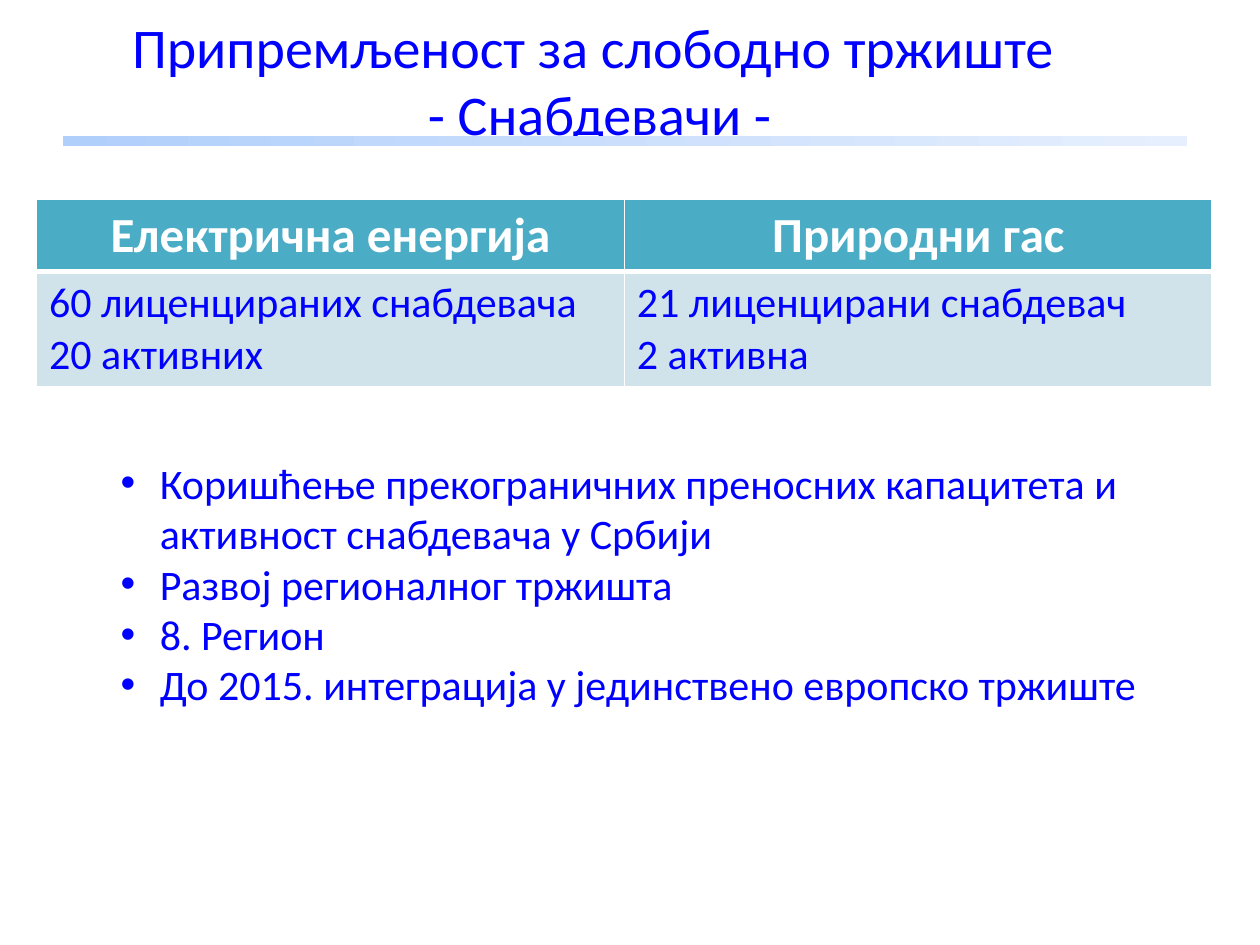
from dataclasses import dataclass

from lxml.etree import SubElement
from pptx import Presentation
from pptx.dml.color import RGBColor as Color
from pptx.enum.shapes import MSO_SHAPE as Shape
from pptx.enum.text import MSO_ANCHOR as Anchor, MSO_AUTO_SIZE as AutoSize, PP_ALIGN as Align
from pptx.oxml.ns import qn
from pptx.util import Inches, Pt


@dataclass(frozen=True)
class Theme:
    font: str = "Calibri"
    text: str = "0000FF"
    white: str = "FFFFFF"
    header_fill: str = "4BACC6"
    body_fill: str = "D0E3EA"
    bar_start: str = "B0CFFB"
    bar_end: str = "E6EFFD"
    title_size: int = 32
    header_size: int = 28
    body_size: int = 24


class SlideBuilder:
    def __init__(self, slide, theme):
        self.slide = slide
        self.theme = theme

    def set_text(self, frame, lines, size, color, align=Align.LEFT, bold=False):
        frame.word_wrap = True
        frame.text = "\n".join(lines)
        for paragraph in frame.paragraphs:
            paragraph.alignment = align
            font = paragraph.font
            font.name = self.theme.font
            font.size = Pt(size)
            font.bold = bold
            font.color.rgb = Color.from_string(color)

    def title(self, text, left, top, width, height):
        title = self.slide.shapes.title
        title.left, title.top = Inches(left), Inches(top)
        title.width, title.height = Inches(width), Inches(height)
        frame = title.text_frame
        frame.auto_size = AutoSize.NONE
        frame.vertical_anchor = Anchor.MIDDLE
        self.set_text(frame, [text], self.theme.title_size, self.theme.text, Align.CENTER)

    def gradient_bar(self, left, top, width, height):
        bar = self.slide.shapes.add_shape(
            Shape.RECTANGLE, Inches(left), Inches(top), Inches(width), Inches(height))
        bar.shadow.inherit = False
        bar.line.fill.background()
        bar.fill.gradient()
        bar.fill.gradient_angle = 0
        colors = (self.theme.bar_start, self.theme.bar_end)
        for stop, position, color in zip(bar.fill.gradient_stops, (0, 1), colors):
            stop.position = position
            stop.color.rgb = Color.from_string(color)

    def borders(self, cell, bottom_width):
        properties = cell._tc.get_or_add_tcPr()
        widths = {"a:lnL": 1, "a:lnR": 1, "a:lnT": 1, "a:lnB": bottom_width}
        for index, (tag, width) in enumerate(widths.items()):
            line = SubElement(properties, qn(tag), w=str(Pt(width)))
            fill = SubElement(line, qn("a:solidFill"))
            SubElement(fill, qn("a:srgbClr"), val=self.theme.white)
            properties.insert(index, line)

    def table(self, columns, left, top, width, row_heights):
        theme = self.theme
        table = self.slide.shapes.add_table(
            2, len(columns), Inches(left), Inches(top),
            Inches(width), Inches(sum(row_heights))).table
        for row, height in zip(table.rows, row_heights):
            row.height = Inches(height)
        for index, (heading, lines) in enumerate(columns):
            header, body = table.cell(0, index), table.cell(1, index)
            self.set_text(header.text_frame, [heading], theme.header_size,
                          theme.white, Align.CENTER, bold=True)
            self.set_text(body.text_frame, lines, theme.body_size, theme.text)
            body.vertical_anchor = Anchor.MIDDLE
            for cell, color, bottom_width in ((header, theme.header_fill, 3),
                                              (body, theme.body_fill, 1)):
                cell.fill.solid()
                cell.fill.fore_color.rgb = Color.from_string(color)
                self.borders(cell, bottom_width)

    def bullets(self, lines, left, top, width, height):
        box = self.slide.shapes.add_textbox(
            Inches(left), Inches(top), Inches(width), Inches(height))
        self.set_text(box.text_frame, lines, self.theme.body_size, self.theme.text)
        for paragraph in box.text_frame.paragraphs:
            paragraph.level = 1
            properties = paragraph._p.get_or_add_pPr()
            properties.set("marL", str(Inches(0.5)))
            properties.set("indent", str(Inches(-0.31)))
            font = SubElement(properties, qn("a:buFont"), typeface="Arial")
            bullet = SubElement(properties, qn("a:buChar"), char="•")
            properties.insert(0, font)
            properties.insert(1, bullet)


def main():
    presentation = Presentation()
    presentation.slide_width, presentation.slide_height = Inches(10), Inches(7.5)
    slide = presentation.slides.add_slide(presentation.slide_layouts[5])
    builder = SlideBuilder(slide, Theme())
    builder.title("Припремљеност за слободно тржиште \v- Снабдевачи -", 0.5, 0.17, 8.52, 0.92)
    builder.gradient_bar(0.5, 1.08, 8.92, 0.08)
    builder.table([
        ("Електрична енергија", ["60 лиценцираних снабдевача", "20 активних"]),
        ("Природни гас", ["21 лиценцирани снабдевач", "2 активна"]),
    ], 0.29, 1.58, 9.33, (0.57, 0.9))
    builder.bullets([
        "Коришћење прекограничних преносних капацитета и активност снабдевача у Србији",
        "Развој регионалног тржишта",
        "8. Регион",
        "До 2015. интеграција у јединствено европско тржиште",
    ], 0.67, 3.58, 9.33, 1.99)
    presentation.save("out.pptx")


if __name__ == "__main__":
    main()
